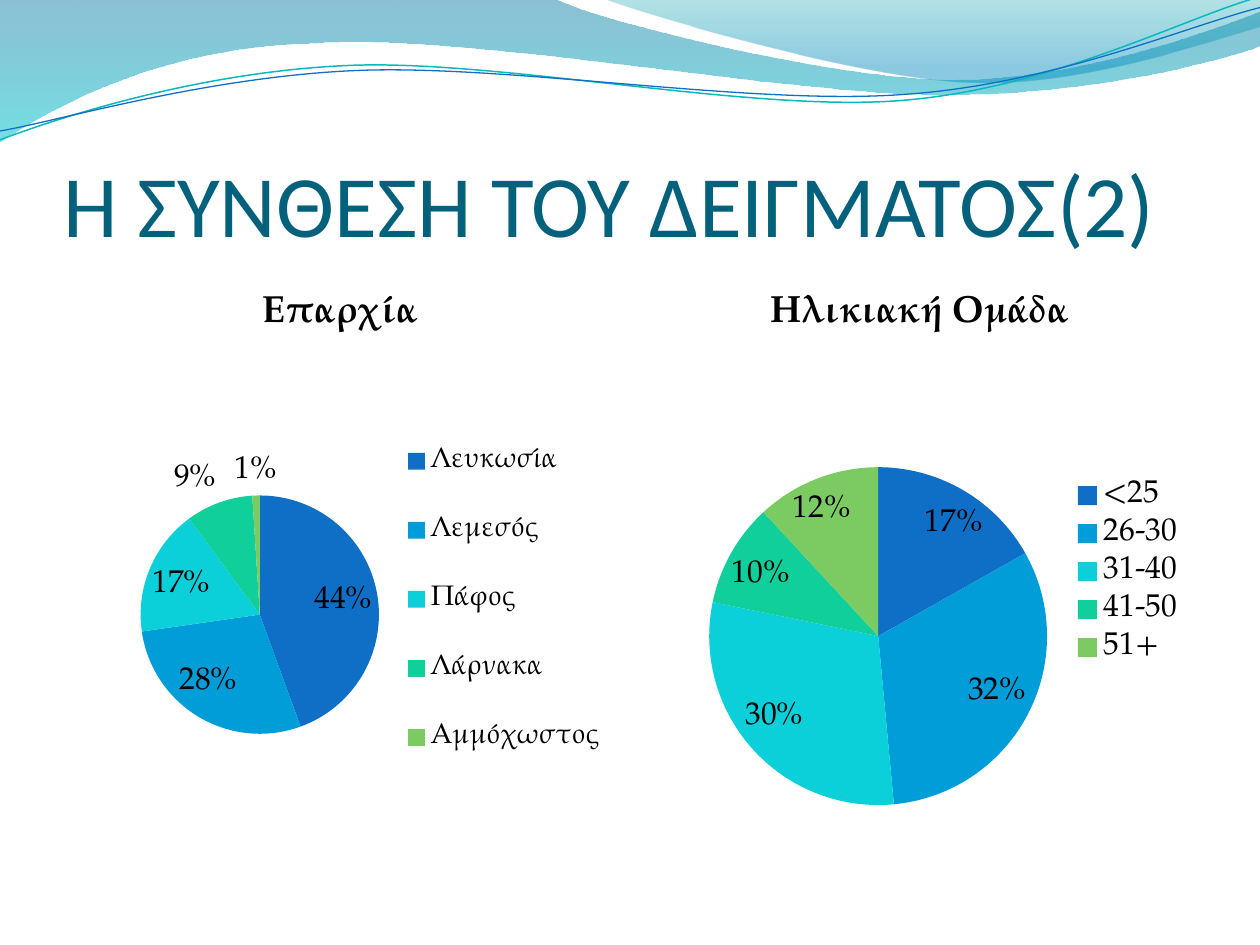
import dataclasses

import lxml.etree
import pptx
import pptx.chart.data
import pptx.dml.color
import pptx.enum.chart
import pptx.enum.text
import pptx.oxml.ns
import pptx.util

qn = pptx.oxml.ns.qn
BEST_FIT = pptx.enum.chart.XL_LABEL_POSITION.BEST_FIT


@dataclasses.dataclass
class Theme:
    title_font: str = "Calibri"
    body_font: str = "TeX Gyre Pagella"
    title: str = "04617B"
    text: str = "000000"
    slices: tuple = ("0F6FC6", "009DD9", "0BD0D9", "10CF9B", "7CCA62")
    teal_line: str = "0AB8BF"
    title_size: float = 50
    heading_size: float = 21.6
    body_size: float = 18
    small_size: float = 16


def rgb(value):
    return pptx.dml.color.RGBColor.from_string(value)


def style_font(font, name, color, size, **values):
    font.color.rgb = rgb(color)
    values.update(name=name, size=pptx.util.Pt(size))
    for key, value in values.items():
        setattr(font, key, value)


class Deck:
    def __init__(self, theme):
        self.theme = theme
        self.prs = pptx.Presentation()
        self.prs.slide_width = pptx.util.Inches(10)
        self.prs.slide_height = pptx.util.Inches(7.5)
        self.s = self.prs.slides.add_slide(self.prs.slide_layouts[5])

    def box(self, x, y, w, h):
        """Turn shares of the slide into lengths."""
        sw, sh = self.prs.slide_width, self.prs.slide_height
        return int(x * sw), int(y * sh), int(w * sw), int(h * sh)

    def freeform(self, start, segments, close):
        """Outline in inches: two numbers make a line, six make a cubic curve."""
        outline = [[pptx.util.Inches(v) for v in seg] for seg in segments]
        x, y = (pptx.util.Inches(v) for v in start)
        fb = self.s.shapes.build_freeform(x, y, scale=1.0)
        fb.add_line_segments([seg[-2:] for seg in outline], close=close)
        sp = fb.convert_to_shape()
        sp.shadow.inherit = False
        # Bend the straight segments that have control points
        lines = list(sp._element.iter(qn("a:lnTo")))
        for line, seg in zip(lines, outline):
            if len(seg) == 6:
                curve = lxml.etree.Element(qn("a:cubicBezTo"))
                for px, py in zip(seg[::2], seg[1::2]):
                    pt = lxml.etree.SubElement(curve, qn("a:pt"))
                    pt.set("x", str(px - sp.left))
                    pt.set("y", str(py - sp.top))
                line.getparent().replace(line, curve)
        return sp

    def wave(self, start, segments, stops):
        sp = self.freeform(start, segments, True)
        sp.line.fill.background()
        sp.fill.gradient()
        sp.fill.gradient_angle = 270
        for stop, (position, color, _) in zip(sp.fill.gradient_stops, stops):
            stop.position = position
            stop.color.rgb = rgb(color)
        colors = list(sp._element.spPr.iter(qn("a:srgbClr")))
        for clr, (_, _, alpha) in zip(colors, stops):
            lxml.etree.SubElement(clr, qn("a:alpha")).set("val", str(alpha * 1000))

    def ribbon(self, start, segments, color, width):
        sp = self.freeform(start, segments, False)
        sp.fill.background()
        sp.line.color.rgb = rgb(color)
        sp.line.width = pptx.util.Pt(width)

    def title(self, text, *share):
        th = self.theme
        sp = self.s.shapes.title
        sp.left, sp.top, sp.width, sp.height = self.box(*share)
        tf = sp.text_frame
        frame = {"margin_left": 0, "margin_right": 0, "margin_bottom": 0,
                 "margin_top": pptx.util.Inches(0.05), "word_wrap": True,
                 "auto_size": pptx.enum.text.MSO_AUTO_SIZE.NONE,
                 "vertical_anchor": pptx.enum.text.MSO_ANCHOR.BOTTOM}
        for key, value in frame.items():
            setattr(tf, key, value)
        p = tf.paragraphs[0]
        p.alignment = pptx.enum.text.PP_ALIGN.LEFT
        r = p.add_run()
        r.text = text
        style_font(r.font, th.title_font, th.title, th.title_size)

    def place(self, parent, x, y, w, h, inner=False):
        """Fix a chart part at shares of the chart's size."""
        for old in parent.findall(qn("c:layout")):
            parent.remove(old)
        layout = lxml.etree.Element(qn("c:layout"))
        manual = lxml.etree.SubElement(layout, qn("c:manualLayout"))
        values = {"xMode": "edge", "yMode": "edge", "x": x, "y": y, "w": w, "h": h}
        if inner:
            values = {"layoutTarget": "inner", **values}
        for key, value in values.items():
            lxml.etree.SubElement(manual, qn("c:" + key)).set("val", str(value))
        parent.insert(0 if inner else 1, layout)

    def pie(self, name, data, share, plot_at, legend_at, legend_size):
        th = self.theme
        cd = pptx.chart.data.CategoryChartData(number_format="0%")
        cd.categories = list(data)
        cd.add_series(name, list(data.values()))
        chart = self.s.shapes.add_chart(
            pptx.enum.chart.XL_CHART_TYPE.PIE, *self.box(*share), cd).chart
        style_font(chart.font, th.body_font, th.text, th.body_size)
        # Heading
        chart.has_title = True
        r = chart.chart_title.text_frame.paragraphs[0].add_run()
        r.text = name
        style_font(r.font, th.body_font, th.text, th.heading_size, bold=True)
        # Legend
        chart.has_legend = True
        chart.legend.position = pptx.enum.chart.XL_LEGEND_POSITION.RIGHT
        chart.legend.include_in_layout = False
        style_font(chart.legend.font, th.body_font, th.text, legend_size)
        self.place(chart.legend._element, *legend_at)
        # Slices and their labels
        plot = chart.plots[0]
        plot.vary_by_categories = True
        series = plot.series[0]
        for i, color in enumerate(th.slices):
            fill = series.points[i].format.fill
            fill.solid()
            fill.fore_color.rgb = rgb(color)
        labels = {"show_value": True, "show_percentage": False, "number_format": "0%",
                  "number_format_is_linked": False, "position": BEST_FIT}
        for key, value in labels.items():
            setattr(series.data_labels, key, value)
        style_font(series.data_labels.font, th.body_font, th.text, th.body_size)
        self.place(chart._chartSpace.chart.plotArea, *plot_at, inner=True)


def main():
    th = Theme()
    deck = Deck(th)

    # Waves and ribbons along the top
    deck.wave((0, 0), [(4.4, -0.01), (4.76, 0.17, 6.64, 0.63, 7.58, 0.63),
                       (8.53, 0.63, 9.58, 0.26, 10, 0.09), (10.01, 0.36),
                       (9.83, 0.44, 8.7, 0.76, 7.46, 0.75),
                       (6.22, 0.75, 3.82, 0.28, 2.57, 0.34),
                       (1.29, 0.36, 0.46, 0.83, -0.01, 1.13)],
              [(0, "0074A1", 45), (1, "00C6CF", 55)])
    deck.wave((4.79, -0.01), [(5.09, 0.11, 6.82, 0.62, 7.69, 0.65),
                              (8.56, 0.69, 9.61, 0.32, 10, 0.21), (10, 0)],
              [(0, "00A1A9", 30), (0.8, "008BBF", 45)])
    deck.ribbon((0, 1.11), [(0.48, 0.93, 1.58, 0.57, 2.77, 0.52),
                            (3.95, 0.47, 5.93, 0.89, 7.13, 0.8),
                            (8.33, 0.71, 9.38, 0.15, 9.98, -0.02)], th.teal_line, 0.85)
    deck.ribbon((0, 1.04), [(0.47, 0.96, 1.64, 0.61, 2.83, 0.56),
                            (4.03, 0.51, 5.97, 0.84, 7.17, 0.75),
                            (8.36, 0.67, 9.41, 0.21, 10, 0.06)], th.slices[0], 0.75)

    # Title
    margin, width = 0.05, 0.44
    deck.title("Η ΣΥΝΘΕΣΗ ΤΟΥ ΔΕΙΓΜΑΤΟΣ(2)", margin, 0.1, 1 - 2 * margin, 0.17)

    # Two pies, one at each margin
    deck.pie("Επαρχία", {"Λευκωσία": 0.44, "Λεμεσός": 0.28, "Πάφος": 0.17,
                         "Λάρνακα": 0.09, "Αμμόχωστος": 0.01},
             (margin, 0.28, width, 0.65), (0.14, 0.37, 0.43, 0.4),
             (0.61, 0.23, 0.37, 0.63), th.small_size)
    deck.pie("Ηλικιακή Ομάδα", {"<25": 0.17, "26-30": 0.32, "31-40": 0.3,
                                "41-50": 0.1, "51+": 0.12},
             (1 - margin - width, 0.28, width, 0.65), (0.12, 0.33, 0.61, 0.55),
             (0.77, 0.34, 0.21, 0.32), th.body_size)

    deck.prs.save("out.pptx")


if __name__ == "__main__":
    main()
